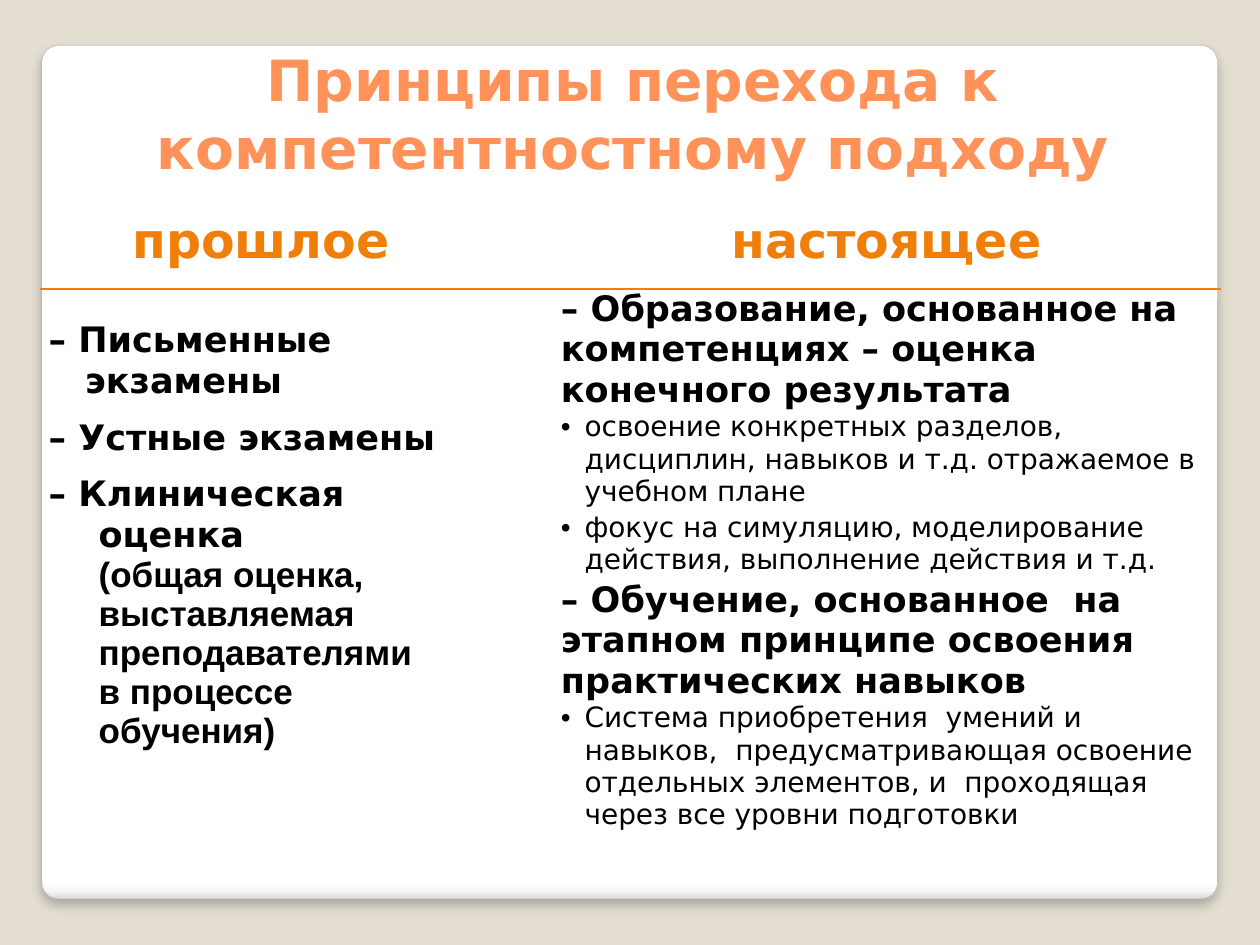
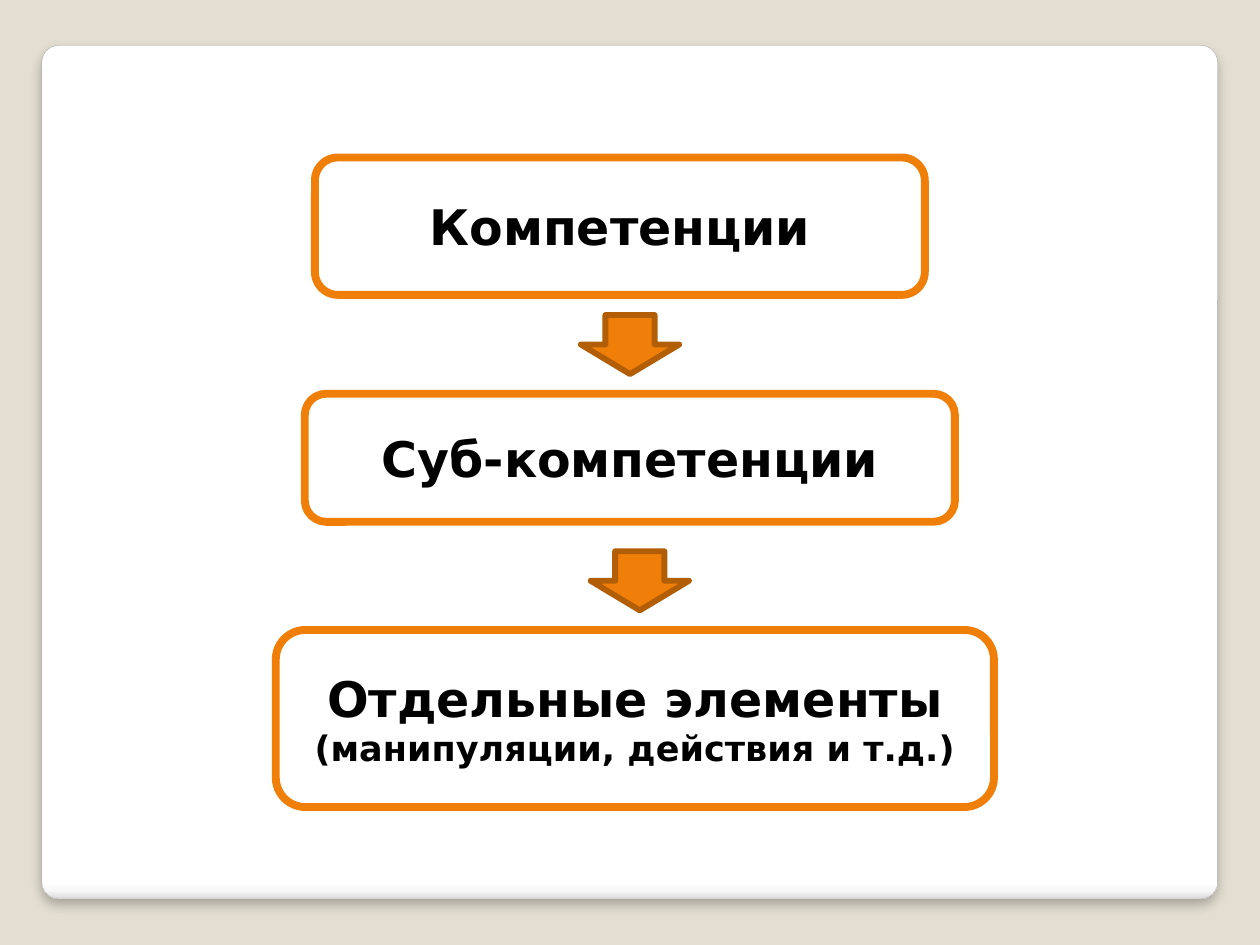
from dataclasses import dataclass
from typing import Any

from lxml import etree
from pptx import Presentation
from pptx.dml.color import RGBColor
from pptx.enum import shapes, text
from pptx.oxml.ns import qn
from pptx.util import Pt

SAND = RGBColor(0xE3, 0xDE, 0xD1)
WHITE = RGBColor(0xFF, 0xFF, 0xFF)
PALE_GREY = RGBColor(0xF7, 0xF7, 0xF7)
EDGE_GREY = RGBColor(0xDA, 0xDA, 0xDA)
OUTLINE_GREY = RGBColor(0xA4, 0xA4, 0xA4)
BLACK = RGBColor(0, 0, 0)
CORAL = RGBColor(0xFF, 0x92, 0x58)
ORANGE = RGBColor(0xF0, 0x7F, 0x09)
BROWN = RGBColor(0xB2, 0x5E, 0x07)
FONT = "DejaVu Sans"
NO_STYLE = "{2D5ABB26-0587-4C30-8999-92F81FD0307C}"
CENTER = text.PP_ALIGN.CENTER
LEFT = text.PP_ALIGN.LEFT
STEP = 135
FIRST_TOP = 90
ARROW_OFFSET = 90


@dataclass(frozen=True)
class Run:
    text: str
    size: float = 20
    bold: bool = True
    color: RGBColor = BLACK
    font: str = FONT


@dataclass(frozen=True)
class Para:
    runs: tuple[Run, ...]
    align: Any = LEFT
    indent: float = 0
    after: float = 0
    bullet: bool = False


@dataclass(frozen=True)
class Level:
    left: float
    width: float
    height: float
    runs: tuple[Run, ...]


def thesis(words: str) -> Para:
    return Para((Run(words),))


def detail(words: str, after: float = 2) -> Para:
    return Para((Run(words, 16, False),), indent=13.5, after=after, bullet=True)


def heading(words: str) -> Para:
    return Para((Run(words, 28, color=ORANGE),), CENTER)


PAST = (
    Para((Run("– Письменные экзамены"),), indent=20.9, after=9.1),
    Para((Run("– Устные экзамены"),), after=9.1),
    Para((Run("– Клиническая оценка\n"),
          Run("(общая оценка, выставляемая преподавателями\nв процессе обучения)",
              font="Arial")), indent=28.6),
)
PRESENT = (
    thesis("– Образование, основанное на компетенциях – оценка конечного результата"),
    detail("освоение конкретных разделов, дисциплин, навыков и т.д. "
           "отражаемое в учебном плане"),
    detail("фокус на симуляцию, моделирование действия, выполнение действия и т.д."),
    thesis("– Обучение, основанное  на этапном принципе освоения практических навыков"),
    detail("Система приобретения  умений и навыков,  предусматривающая освоение "
           "отдельных элементов, и  проходящая через все уровни подготовки", 0),
)
LEVELS = (
    Level(180, 348.5, 78.5, (Run("Компетенции", 28),)),
    Level(174.2, 371.5, 73.2, (Run("Суб-компетенции", 28),)),
    Level(157.6, 410.4, 101.2, (Run("Отдельные элементы ", 28),
                                Run("(манипуляции, действия и т.д.)"))),
)
ARROW_LEFTS = (331.9, 337.5)


def apply(target: Any, values: dict[str, Any]) -> None:
    for name, value in values.items():
        setattr(target, name, value)


def add_xml(parent: Any, tag: str, **attrs: Any) -> Any:
    return etree.SubElement(parent, qn(tag), {k: str(v) for k, v in attrs.items()})


def write(tf: Any, paras: tuple[Para, ...]) -> None:
    for i, para in enumerate(paras):
        p = tf.add_paragraph() if i else tf.paragraphs[0]
        apply(p, {"alignment": para.align, "space_before": Pt(0),
                  "space_after": Pt(para.after), "line_spacing": 1.0})
        pPr = p._p.get_or_add_pPr()
        pPr.set("marL", str(Pt(para.indent)))
        pPr.set("indent", str(-Pt(para.indent)))
        if para.bullet:
            add_xml(pPr, "a:buFont", typeface="Arial")
            add_xml(pPr, "a:buChar", char="•")
        else:
            add_xml(pPr, "a:buNone")
        for run in para.runs:
            for n, line in enumerate(run.text.split("\n")):
                if n:
                    p.add_line_break()
                if line:
                    r = p.add_run()
                    r.text = line
                    apply(r.font, {"size": Pt(run.size), "bold": run.bold, "name": run.font})
                    r.font.color.rgb = run.color


def add_outlined(s: Any, kind: Any, box: tuple[float, ...], line: RGBColor,
                 weight: float, fill: RGBColor | None = None) -> Any:
    sp = s.shapes.add_shape(kind, *map(Pt, box))
    sp.shadow.inherit = False
    sp.line.color.rgb = line
    sp.line.width = Pt(weight)
    if fill is None:
        sp.fill.background()
    else:
        sp.fill.solid()
        sp.fill.fore_color.rgb = fill
    return sp


def add_panel(s: Any) -> None:
    sp = add_outlined(s, shapes.MSO_SHAPE.ROUNDED_RECTANGLE,
                      (23.9, 25.9, 671.9, 487.8), OUTLINE_GREY, 0.16)
    sp.adjustments[0] = 0.02
    sp.fill.gradient()
    sp.fill.gradient_angle = 270
    stops = sp.element.find(".//" + qn("a:gsLst"))
    for stop in list(stops):
        stops.remove(stop)
    for percent, color in ((0, WHITE), (98, WHITE), (99, PALE_GREY), (100, EDGE_GREY)):
        add_xml(add_xml(stops, "a:gs", pos=percent * 1000), "a:srgbClr", val=color)
    shadow = add_xml(sp.element.find(".//" + qn("a:effectLst")), "a:outerShdw",
                     blurRad=Pt(6), dist=Pt(4), dir=5400000, algn="t", rotWithShape=0)
    add_xml(add_xml(shadow, "a:srgbClr", val=BLACK), "a:alpha", val=25000)
    s.shapes.element.insert(2, sp.element)


def add_rule(cell: Any, side: str) -> None:
    tcPr = cell._tc.get_or_add_tcPr()
    ln = add_xml(tcPr, side, w=Pt(1.25))
    add_xml(add_xml(ln, "a:solidFill"), "a:srgbClr", val=ORANGE)
    tcPr.insert(0, ln)


def add_comparison(s: Any) -> None:
    frame = s.shapes.add_table(2, 3, Pt(22.6), Pt(118.1), Pt(675.1), Pt(393.8))
    frame.element.find(".//" + qn("a:tableStyleId")).text = NO_STYLE
    table = frame.table
    apply(table, {"first_row": False, "horz_banding": False})
    for column, width in zip(table.columns, (253.2, 39.6, 382.3)):
        column.width = Pt(width)
    for row, height in zip(table.rows, (46.9, 346.9)):
        row.height = Pt(height)
    for row, side, mx, my in zip(table.rows, ("a:lnB", "a:lnT"), (7.2, 5.2), (3.6, 0)):
        for cell in row.cells:
            cell.fill.background()
            apply(cell, {"margin_left": Pt(mx), "margin_right": Pt(mx),
                         "margin_top": Pt(my), "margin_bottom": Pt(my)})
            add_rule(cell, side)
    table.cell(1, 0).margin_top = Pt(18)
    contents = {(0, 0): (heading("прошлое"),), (0, 2): (heading("настоящее"),),
                (1, 0): PAST, (1, 2): PRESENT}
    for place, paras in contents.items():
        write(table.cell(*place).text_frame, paras)


def build_principles(s: Any) -> None:
    add_panel(s)
    title = s.shapes.title
    apply(title, {"left": Pt(39.6), "top": Pt(33.8), "width": Pt(644.4), "height": Pt(73.4)})
    tf = title.text_frame
    apply(tf, {"word_wrap": True, "auto_size": text.MSO_AUTO_SIZE.NONE,
               "vertical_anchor": text.MSO_ANCHOR.BOTTOM})
    write(tf, (Para((Run("Принципы перехода к компетентностному подходу",
                         32.4, color=CORAL),), CENTER),))
    add_comparison(s)


def build_levels(s: Any) -> None:
    add_panel(s)
    for i, level in enumerate(LEVELS):
        sp = add_outlined(s, shapes.MSO_SHAPE.ROUNDED_RECTANGLE,
                          (level.left, FIRST_TOP + i * STEP, level.width, level.height),
                          ORANGE, 4.5)
        apply(sp.text_frame, {"word_wrap": True, "vertical_anchor": text.MSO_ANCHOR.MIDDLE})
        write(sp.text_frame, (Para(level.runs, CENTER),))
    for i, left in enumerate(ARROW_LEFTS):
        add_outlined(s, shapes.MSO_SHAPE.DOWN_ARROW,
                     (left, FIRST_TOP + ARROW_OFFSET + i * STEP, 56.2, 33.8),
                     BROWN, 3.35, ORANGE)


def main() -> None:
    prs = Presentation()
    apply(prs, {"slide_width": Pt(720), "slide_height": Pt(540)})
    fill = prs.slide_master.background.fill
    fill.solid()
    fill.fore_color.rgb = SAND
    build_principles(prs.slides.add_slide(prs.slide_layouts.get_by_name("Title Only")))
    build_levels(prs.slides.add_slide(prs.slide_layouts.get_by_name("Blank")))
    prs.save("out.pptx")


if __name__ == "__main__":
    main()
